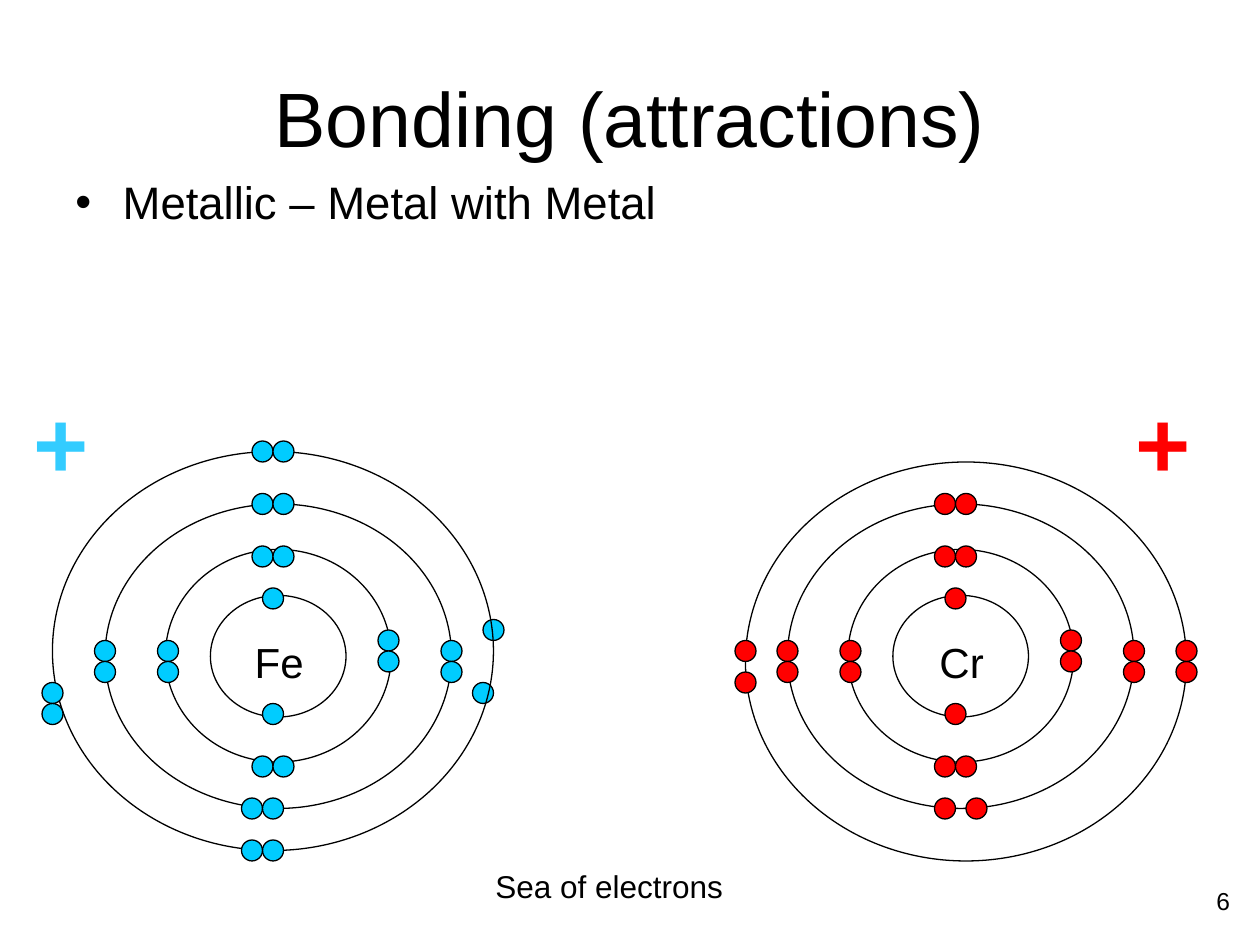
from typing import NamedTuple

from lxml import etree
from pptx import Presentation
from pptx import util as u
from pptx.dml.color import RGBColor
from pptx.enum import shapes, text
from pptx.oxml import ns

Pt = u.Pt
BLACK = RGBColor(0x00, 0x00, 0x00)
RED = RGBColor(0xFF, 0x00, 0x00)
CYAN = RGBColor(0x00, 0xCC, 0xFF)
LIGHT_BLUE = RGBColor(0x33, 0xCC, 0xFF)
FONT = "Arial"
ELECTRON_SIZE = 12


class Box(NamedTuple):
    left: float
    top: float
    width: float
    height: float


class Label(NamedTuple):
    wording: str
    box: Box
    size: float
    color: RGBColor = BLACK
    align: text.PP_ALIGN = text.PP_ALIGN.LEFT
    anchor: text.MSO_ANCHOR = text.MSO_ANCHOR.TOP
    bold: bool = False
    wrap: bool = False


class Atom(NamedTuple):
    symbol: str
    offset: float  # added to every x position of the atom's shared parts
    color: RGBColor
    outer_ring: Box
    behind_ring: list[tuple[float, float]]
    outer_electrons: list[tuple[float, float]]


# Parts that both atoms share
SYMBOL_BOX = Box(135.5, 360, 48, 36.5)
INNER_RINGS = [Box(60, 288, 198, 174), Box(94.5, 314, 129, 121.5), Box(120.25, 340.25, 77.5, 69.5)]
INNER_ELECTRONS = [
    (150, 336), (150, 402),
    (144, 312), (156, 312), (90, 366), (90, 378),
    (216, 360), (216, 372), (144, 432), (156, 432),
    (144, 282), (156, 282), (54, 366), (54, 378), (252, 366), (252, 378),
]

ATOMS = [
    Atom("Fe", 0, CYAN, Box(30, 258, 252, 228),
         [(276, 354), (270, 390)],
         [(138, 456), (150, 456), (24, 390), (24, 402),
          (144, 252), (156, 252), (150, 480), (138, 480)]),
    Atom("Cr", 390, RED, Box(36, 264, 252, 228),
         [],
         [(30, 384), (30, 366), (144, 456), (162, 456), (282, 378), (282, 366)]),
]

LABELS = [
    Label("+", Box(12, 216, 50.5, 72), 54, LIGHT_BLUE, bold=True),
    Label("+", Box(642, 216, 50.5, 72), 54, RED, bold=True),
    Label("Sea of electrons", Box(276, 492, 145, 29), 18),
    Label("6", Box(684.5, 502.5, 25.5, 26), 14, align=text.PP_ALIGN.RIGHT, wrap=True),
]


def add_label(slide, label: Label):
    shape = slide.shapes.add_textbox(*map(Pt, label.box))
    frame = shape.text_frame
    frame.word_wrap = label.wrap
    frame.vertical_anchor = label.anchor
    frame.text = label.wording
    paragraph = frame.paragraphs[0]
    paragraph.alignment = label.align
    font = paragraph.runs[0].font
    font.name, font.size, font.bold = FONT, Pt(label.size), label.bold
    font.color.rgb = label.color
    return shape


def add_bullet(shape, indent: float) -> None:
    properties = shape.text_frame.paragraphs[0]._p.get_or_add_pPr()
    properties.set("marL", str(Pt(indent)))
    properties.set("indent", str(-Pt(indent)))
    etree.SubElement(properties, ns.qn("a:buFont"), typeface=FONT)
    etree.SubElement(properties, ns.qn("a:buChar"), char="•")


def add_ellipse(slide, box: Box, offset: float, fill: RGBColor | None = None) -> None:
    box = box._replace(left=box.left + offset)
    shape = slide.shapes.add_shape(shapes.MSO_SHAPE.OVAL, *map(Pt, box))
    shape.shadow.inherit = False
    if fill is None:
        shape.fill.background()
    else:
        shape.fill.solid()
        shape.fill.fore_color.rgb = fill
    shape.line.color.rgb = BLACK
    shape.line.width = Pt(0.75)


def add_electrons(slide, atom: Atom, positions: list[tuple[float, float]]) -> None:
    for left, top in positions:
        add_ellipse(slide, Box(left, top, ELECTRON_SIZE, ELECTRON_SIZE), atom.offset, atom.color)


def add_atom(slide, atom: Atom) -> None:
    for ring in INNER_RINGS:
        add_ellipse(slide, ring, atom.offset)
    symbol_box = SYMBOL_BOX._replace(left=SYMBOL_BOX.left + atom.offset)
    add_label(slide, Label(atom.symbol, symbol_box, 24, align=text.PP_ALIGN.CENTER))
    add_electrons(slide, atom, INNER_ELECTRONS + atom.behind_ring)
    add_ellipse(slide, atom.outer_ring, atom.offset)
    add_electrons(slide, atom, atom.outer_electrons)


def main() -> None:
    presentation = Presentation()
    presentation.slide_width, presentation.slide_height = Pt(720), Pt(540)
    slide = presentation.slides.add_slide(presentation.slide_layouts[6])

    # Title and bullet
    add_label(slide, Label("Bonding (attractions)", Box(36, 21.6, 648, 90), 44,
                           align=text.PP_ALIGN.CENTER, anchor=text.MSO_ANCHOR.MIDDLE, wrap=True))
    body = add_label(slide, Label("Metallic – Metal with Metal", Box(36, 96, 642, 132.5), 26,
                                  wrap=True))
    add_bullet(body, 27)

    # Atoms with their electron shells
    for atom in ATOMS:
        add_atom(slide, atom)

    # Charges, caption and slide number
    for label in LABELS:
        add_label(slide, label)

    presentation.save("out.pptx")


if __name__ == "__main__":
    main()
